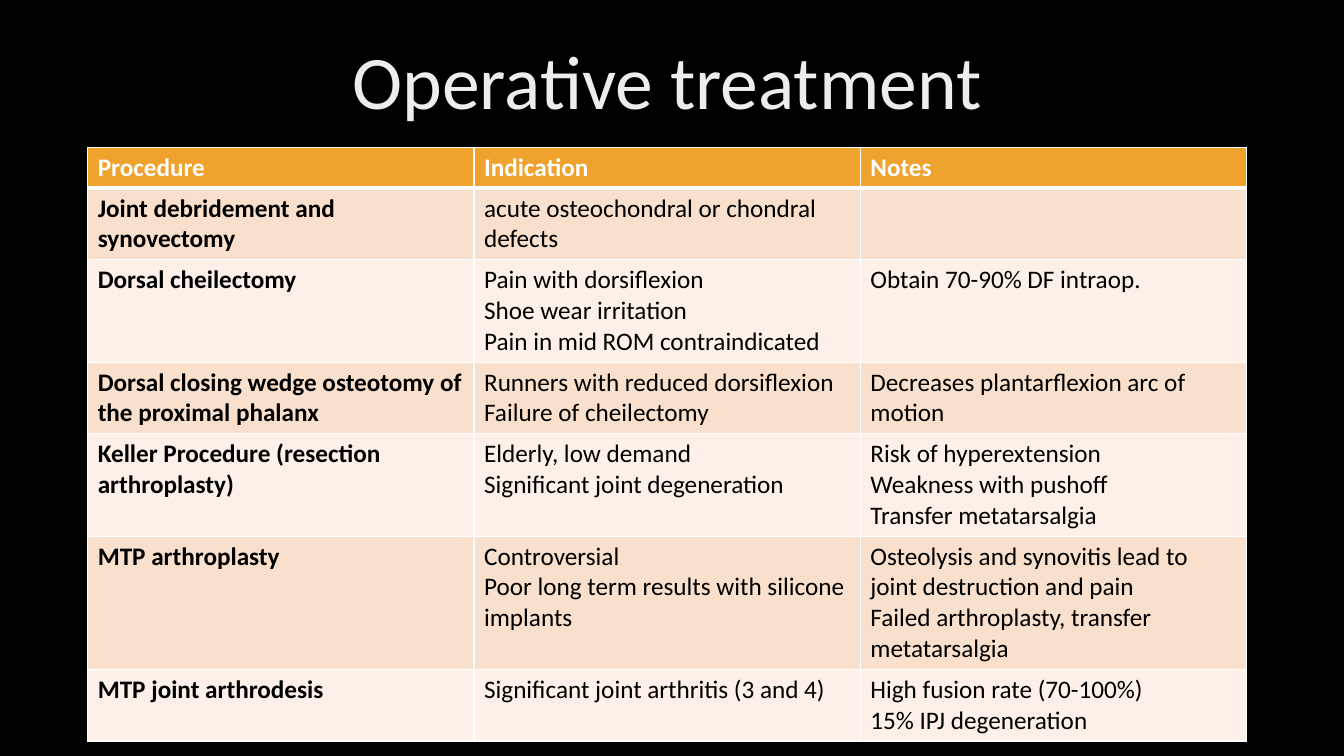
from lxml import etree
from pptx import Presentation
from pptx.dml.color import RGBColor
from pptx.enum.text import MSO_ANCHOR, PP_ALIGN
from pptx.oxml import parse_xml
from pptx.oxml.ns import nsdecls, qn
from pptx.util import Cm, Pt

THEME = {
    "font": "Calibri",
    "title_size": Pt(54),
    "table_size": Pt(18),
    "background": RGBColor(0x00, 0x00, 0x00),
    "header_fill": RGBColor(0xF0, 0xA2, 0x2E),
    "header_text": RGBColor(0xFF, 0xFF, 0xFF),
    "band_fills": [RGBColor(0xF9, 0xE0, 0xCD), RGBColor(0xFC, 0xF0, 0xE8)],
    "body_text": RGBColor(0x00, 0x00, 0x00),
    "border": "FFFFFF",
    "title_gradient": [(0, "DEDEDE"), (28, "EDEDED"), (100, "FFFFFF")],
}

TREATMENTS = [
    (["Procedure"], ["Indication"], ["Notes"]),
    (["Joint debridement and synovectomy"], ["acute osteochondral or chondral defects"], []),
    (
        ["Dorsal cheilectomy"],
        ["Pain with dorsiflexion", "Shoe wear irritation", "Pain in mid ROM contraindicated"],
        ["Obtain 70-90% DF intraop."],
    ),
    (
        ["Dorsal closing wedge osteotomy of the proximal phalanx"],
        ["Runners with reduced dorsiflexion", "Failure of cheilectomy"],
        ["Decreases plantarflexion arc of motion"],
    ),
    (
        ["Keller Procedure (resection arthroplasty)"],
        ["Elderly, low demand", "Significant joint degeneration"],
        ["Risk of hyperextension", "Weakness with pushoff", "Transfer metatarsalgia"],
    ),
    (
        ["MTP arthroplasty"],
        ["Controversial", "Poor long term results with silicone implants"],
        [
            "Osteolysis and synovitis lead to joint destruction and pain",
            "Failed arthroplasty, transfer metatarsalgia",
        ],
    ),
    (
        ["MTP joint arthrodesis"],
        ["Significant joint arthritis (3 and 4)"],
        ["High fusion rate (70-100%)", "15% IPJ degeneration"],
    ),
]
ROW_LINES = [1, 2, 3, 2, 3, 4, 2]


def add_border(cell, side, width):
    line = etree.SubElement(cell._tc.get_or_add_tcPr(), qn(f"a:ln{side}"), w=str(Pt(width)))
    fill = etree.SubElement(line, qn("a:solidFill"))
    etree.SubElement(fill, qn("a:srgbClr"), val=THEME["border"])


presentation = Presentation()
presentation.slide_width = Cm(33.87)
presentation.slide_height = Cm(19.05)
slide = presentation.slides.add_slide(presentation.slide_layouts[5])
slide.background.fill.solid()
slide.background.fill.fore_color.rgb = THEME["background"]

title = slide.shapes.title
title_place = {"left": Cm(2.21), "top": Cm(0.3), "width": Cm(29.21), "height": Cm(3.68)}
for name, value in title_place.items():
    setattr(title, name, value)
title.text_frame.vertical_anchor = MSO_ANCHOR.MIDDLE
paragraph = title.text_frame.paragraphs[0]
paragraph.alignment = PP_ALIGN.CENTER
paragraph.line_spacing = 0.9
run = paragraph.add_run()
run.text = "Operative treatment"
run.font.size = THEME["title_size"]
stops = "".join(
    f'<a:gs pos="{position * 1000}"><a:srgbClr val="{color}"/></a:gs>'
    for position, color in THEME["title_gradient"]
)
run.font._element.insert(0, parse_xml(
    f'<a:gradFill {nsdecls("a")}><a:gsLst>{stops}</a:gsLst>'
    '<a:lin ang="4800000" scaled="0"/></a:gradFill>'
))
run.font.name = THEME["font"]

row_heights = [Cm(0.25 + 0.77 * lines) for lines in ROW_LINES]
table = slide.shapes.add_table(
    len(TREATMENTS), 3, Cm(2.21), Cm(3.71), Cm(29.21), sum(row_heights)
).table
for row, height in zip(table.rows, row_heights):
    row.height = height

for row_index, treatment in enumerate(TREATMENTS):
    is_header = row_index == 0
    for column_index, lines in enumerate(treatment):
        cell = table.cell(row_index, column_index)
        widths = {"L": 1, "R": 1, "T": 3 if row_index == 1 else 1, "B": 3 if is_header else 1}
        for side, width in widths.items():
            add_border(cell, side, width)
        cell.fill.solid()
        band_fill = THEME["band_fills"][(row_index - 1) % 2]
        cell.fill.fore_color.rgb = THEME["header_fill"] if is_header else band_fill
        cell.text = "\n".join(lines)
        text_format = {
            "name": THEME["font"],
            "size": THEME["table_size"],
            "bold": is_header or column_index == 0,
        }
        for paragraph in cell.text_frame.paragraphs:
            for run in paragraph.runs:
                for name, value in text_format.items():
                    setattr(run.font, name, value)
                run.font.color.rgb = THEME["header_text" if is_header else "body_text"]

presentation.save("out.pptx")
